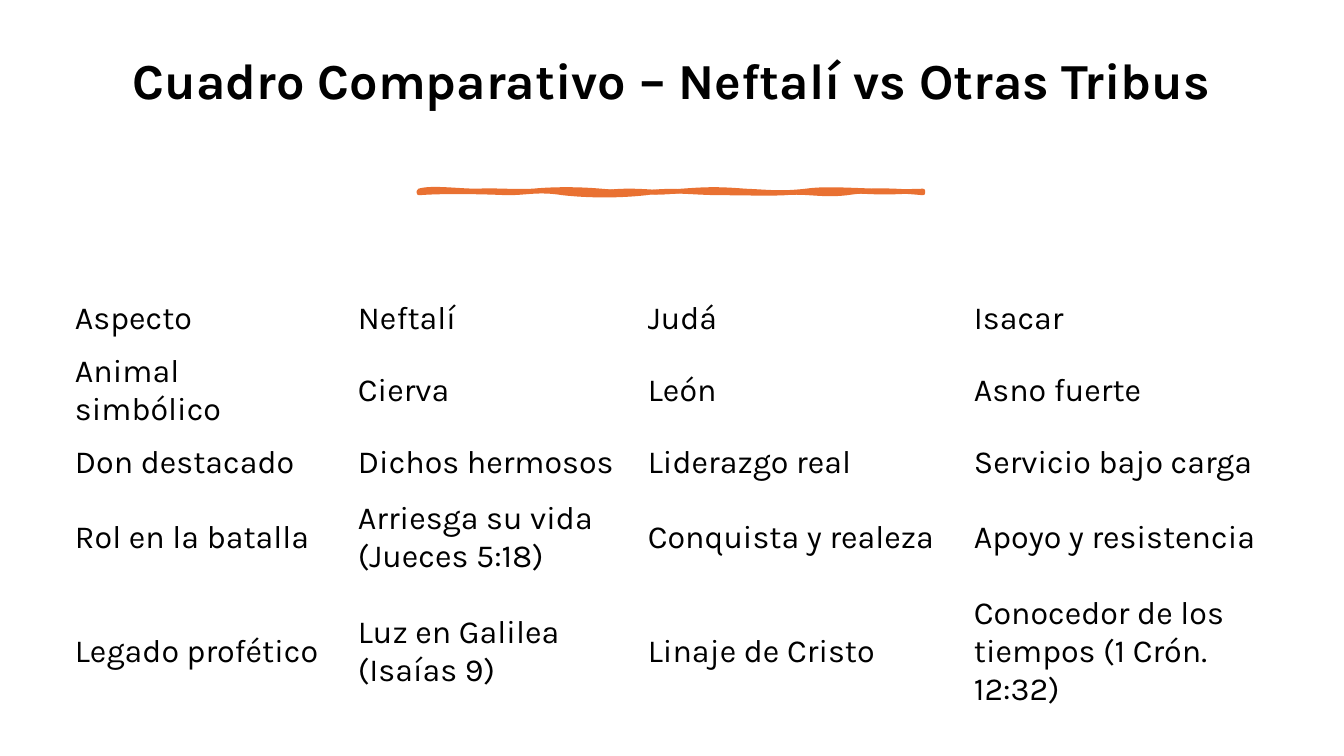
from lxml.etree import SubElement
from pptx import Presentation
from pptx.dml.color import RGBColor
from pptx.enum.text import MSO_ANCHOR, PP_ALIGN
from pptx.oxml.ns import qn
from pptx.util import Pt

PX = 12192000 / 1344
BLACK = RGBColor(0x00, 0x00, 0x00)
WHITE = RGBColor(0xFF, 0xFF, 0xFF)
ORANGE = RGBColor(0xE9, 0x71, 0x32)
PLAIN = "{2D5ABB26-0587-4C30-8999-92F81FD0307C}"


def px(n):
    return round(n * PX)


def put(item, **vals):
    """Set each named value as an attribute of item."""
    for key, val in vals.items():
        setattr(item, key, val)


deck = Presentation()
put(deck, slide_width=px(1344), slide_height=px(756))
slide = deck.slides.add_slide(deck.slide_layouts[5])
slide.background.fill.solid()
slide.background.fill.fore_color.rgb = WHITE

# Title: the deep bottom margin lifts the line above the centre of its box
title = slide.shapes.title
put(title, left=px(70), top=px(46), width=px(1203), height=px(138))
frame = title.text_frame
frame.text = "Cuadro Comparativo – Neftalí vs Otras Tribus"
put(frame, word_wrap=True, vertical_anchor=MSO_ANCHOR.MIDDLE,
    margin_top=px(5), margin_bottom=px(69))
para = frame.paragraphs[0]
put(para, alignment=PP_ALIGN.CENTER, line_spacing=0.9, space_after=Pt(6))
put(para.font, name="Karla", size=Pt(36), bold=True)
para.font.color.rgb = BLACK

# Hand-drawn rule: cubic curves, each as two controls and an end point,
# measured from the left end of the rule
LONG, THICK = 504, 2
EDGE = [
    (12, -4, 39, 0, 58, 0), (77, -1, 94, 1, 114, 0),
    (134, -2, 160, -2, 182, 0), (203, 2, 239, 2, 263, 0),
    (289, -2, 301, -2, 326, 0), (350, 1, 361, 3, 387, 0),
    (414, -4, 455, 2, 504, 0), (505, 1, 504, 1, 504, 2),
    (483, 0, 453, -2, 428, 2), (403, 5, 388, 0, 366, 2),
    (343, 3, 334, 2, 304, 2), (273, 2, 253, -2, 227, 2),
    (200, 5, 171, 5, 144, 2), (119, -2, 108, 2, 88, 2),
    (68, 1, 23, 0, 0, 2), (0, 1, 0, 0, 0, 0),
]
BODY = [
    (16, -1, 37, -2, 63, 0), (88, 1, 93, 2, 119, 0),
    (145, -2, 160, 2, 182, 0), (204, -4, 225, -2, 253, 0),
    (282, 1, 311, -4, 331, 0), (350, 2, 389, -2, 413, 0),
    (436, 1, 460, 3, 504, 0), (504, 0, 504, 1, 504, 2),
    (467, 4, 464, 4, 428, 2), (391, -1, 383, 1, 346, 2),
    (308, 2, 303, -2, 263, 2), (225, 6, 223, 0, 207, 2),
    (190, 3, 158, 3, 129, 2), (102, 0, 89, 1, 63, 2),
    (37, 2, 26, -1, 0, 2), (0, 1, 0, 0, 0, 0),
]
pen = slide.shapes.build_freeform(419, 191, scale=PX)
pen.add_line_segments([(419 + LONG, 191), (419 + LONG, 191 + THICK),
                       (419, 191 + THICK)])
wave = pen.convert_to_shape()
wave.shadow.inherit = False
wave.fill.solid()
wave.fill.fore_color.rgb = ORANGE
wave.line.color.rgb = ORANGE
wave.line.width = Pt(3.25)
paths = next(wave.element.iter(qn("a:pathLst")))
paths.remove(paths[0])
for curves, paint in ((EDGE, {"fill": "none"}), (BODY, {"stroke": "0"})):
    trace = SubElement(paths, qn("a:path"), w=str(px(LONG)),
                       h=str(px(THICK)), **paint)
    start = SubElement(trace, qn("a:moveTo"))
    SubElement(start, qn("a:pt"), x="0", y="0")
    for curve in curves:
        bend = SubElement(trace, qn("a:cubicBezTo"))
        for x, y in zip(curve[::2], curve[1::2]):
            SubElement(bend, qn("a:pt"), x=str(px(x)), y=str(px(y)))
    SubElement(trace, qn("a:close"))

# Table
ROWS = [
    ("Aspecto", "Neftalí", "Judá", "Isacar"),
    ("Animal simbólico", "Cierva", "León", "Asno fuerte"),
    ("Don destacado", "Dichos hermosos", "Liderazgo real",
     "Servicio bajo carga"),
    ("Rol en la batalla", "Arriesga su vida (Jueces 5:18)",
     "Conquista y realeza", "Apoyo y resistencia"),
    ("Legado profético", "Luz en Galilea (Isaías 9)", "Linaje de Cristo",
     "Conocedor de los tiempos (1 Crón. 12:32)"),
]
WIDTHS = (283, 290, 326, 320)
HEIGHTS = (56, 56, 56, 95, 133)
holder = slide.shapes.add_table(
    len(ROWS), len(WIDTHS), px(62), px(291),
    px(sum(WIDTHS)), px(sum(HEIGHTS)))
next(holder.element.iter(qn("a:tableStyleId"))).text = PLAIN
grid = holder.table
put(grid, first_row=False, horz_banding=False)
for col, width in zip(grid.columns, WIDTHS):
    col.width = px(width)
for row, height, texts in zip(grid.rows, HEIGHTS, ROWS):
    row.height = px(height)
    for cell, text in zip(row.cells, texts):
        cell.text = text
        cell.fill.background()
        put(cell, vertical_anchor=MSO_ANCHOR.MIDDLE,
            margin_left=px(13), margin_right=px(13),
            margin_top=px(6), margin_bottom=px(6))
        font = cell.text_frame.paragraphs[0].runs[0].font
        put(font, name="Karla", size=Pt(23))
        font.color.rgb = BLACK

deck.save("out.pptx")
